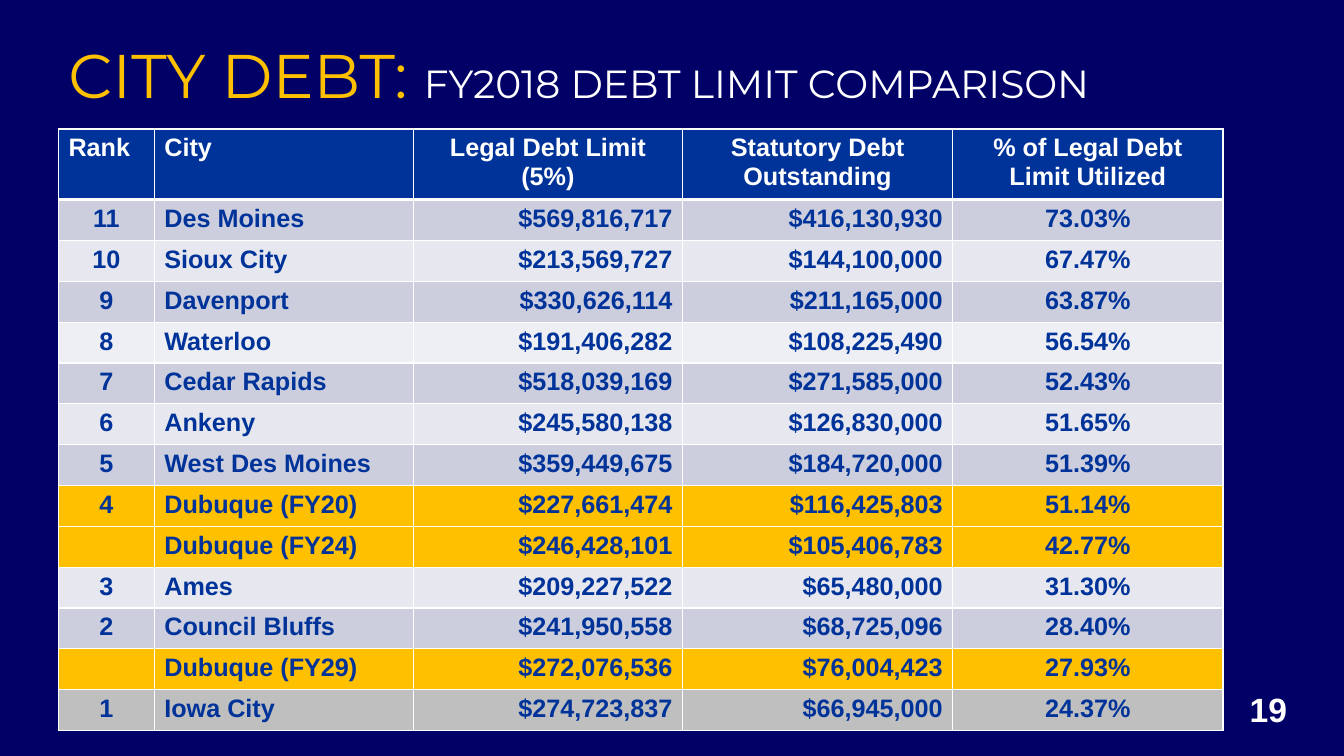
from lxml import etree
from pptx import Presentation
from pptx import util as u
from pptx.dml import color
from pptx.enum import text
from pptx.oxml import ns

NAVY, BLUE, GOLD, WHITE = "000066", "003399", "FFC000", "FFFFFF"
DARK, PALE, LIGHT, GRAY = "CCCEDE", "E7E8EF", "EEEFF4", "BFBFBF"
HEAD = ("Rank", "City", "Legal Debt Limit (5%)",
        "Statutory Debt Outstanding", "% of Legal Debt Limit Utilized")
ROWS = [
    (DARK, "11", "Des Moines", "$569,816,717", "$416,130,930", "73.03%"),
    (PALE, "10", "Sioux City", "$213,569,727", "$144,100,000", "67.47%"),
    (DARK, "9", "Davenport", "$330,626,114", "$211,165,000", "63.87%"),
    (LIGHT, "8", "Waterloo", "$191,406,282", "$108,225,490", "56.54%"),
    (DARK, "7", "Cedar Rapids", "$518,039,169", "$271,585,000", "52.43%"),
    (PALE, "6", "Ankeny", "$245,580,138", "$126,830,000", "51.65%"),
    (DARK, "5", "West Des Moines", "$359,449,675", "$184,720,000", "51.39%"),
    (GOLD, "4", "Dubuque (FY20)", "$227,661,474", "$116,425,803", "51.14%"),
    (GOLD, "", "Dubuque (FY24)", "$246,428,101", "$105,406,783", "42.77%"),
    (PALE, "3", "Ames", "$209,227,522", "$65,480,000", "31.30%"),
    (DARK, "2", "Council Bluffs", "$241,950,558", "$68,725,096", "28.40%"),
    (GOLD, "", "Dubuque (FY29)", "$272,076,536", "$76,004,423", "27.93%"),
    (GRAY, "1", "Iowa City", "$274,723,837", "$66,945,000", "24.37%"),
]
WIDTHS = (0.95, 2.57, 2.67, 2.68, 2.68)
LEFT, TOP, TALL, HEAD_H = 0.58, 1.28, 5.97, 0.7
ROW_H = (TALL - HEAD_H) / len(ROWS)
L, C, R = text.PP_ALIGN.LEFT, text.PP_ALIGN.CENTER, text.PP_ALIGN.RIGHT
HEAD_AL, BODY_AL = (L, L, C, C, C), (C, L, R, R, C)


def paint(fill, tint):
    fill.solid()
    fill.fore_color.rgb = color.RGBColor.from_string(tint)


def write(para, words, size, face, tint, bold=False):
    run = para.add_run()
    run.text = words
    font = run.font
    font.size, font.name, font.bold = u.Pt(size), face, bold
    paint(font.fill, tint)


def box(slide, *area):
    frame = slide.shapes.add_textbox(*map(u.Inches, area)).text_frame
    frame.word_wrap = True
    return frame.paragraphs[0]


def edge(cell, side, width):
    props = cell._tc.get_or_add_tcPr()
    line = etree.SubElement(props, ns.qn("a:" + side), w=str(u.Pt(width)))
    solid = etree.SubElement(line, ns.qn("a:solidFill"))
    etree.SubElement(solid, ns.qn("a:srgbClr"), val=WHITE)


def fill_row(table, row, words, aligns, back, ink, top, base):
    for col, (word, align) in enumerate(zip(words, aligns)):
        cell = table.cell(row, col)
        for side, width in (("lnL", 1), ("lnR", 1), ("lnT", top), ("lnB", base)):
            edge(cell, side, width)
        paint(cell.fill, back)
        para = cell.text_frame.paragraphs[0]
        para.alignment = align
        if word:
            write(para, word, 18, "Arial", ink, True)


def main():
    deck = Presentation()
    deck.slide_width, deck.slide_height = u.Inches(13.33), u.Inches(7.5)
    slide = deck.slides.add_slide(deck.slide_layouts[6])
    paint(slide.background.fill, NAVY)

    page = box(slide, 12.08, 6.79, 1, 0.5)
    page.alignment = C
    write(page, "19", 24, "Arial", WHITE, True)

    title = box(slide, LEFT, 0.32, 12.17, 1.25)
    write(title, "CITY DEBT: ", 44, "Montserrat", GOLD)
    write(title, "FY2018 DEBT LIMIT COMPARISON", 28, "Montserrat", WHITE)

    area = map(u.Inches, (LEFT, TOP, sum(WIDTHS), TALL))
    table = slide.shapes.add_table(len(ROWS) + 1, len(WIDTHS), *area).table
    for col, width in zip(table.columns, WIDTHS):
        col.width = u.Inches(width)
    for row in table.rows:
        row.height = u.Inches(ROW_H)
    table.rows[0].height = u.Inches(HEAD_H)

    fill_row(table, 0, HEAD, HEAD_AL, BLUE, WHITE, 1, 3)
    for num, (back, *words) in enumerate(ROWS, 1):
        top = 3 if num == 1 else 1
        fill_row(table, num, words, BODY_AL, back, BLUE, top, 1)

    deck.save("out.pptx")


if __name__ == "__main__":
    main()
